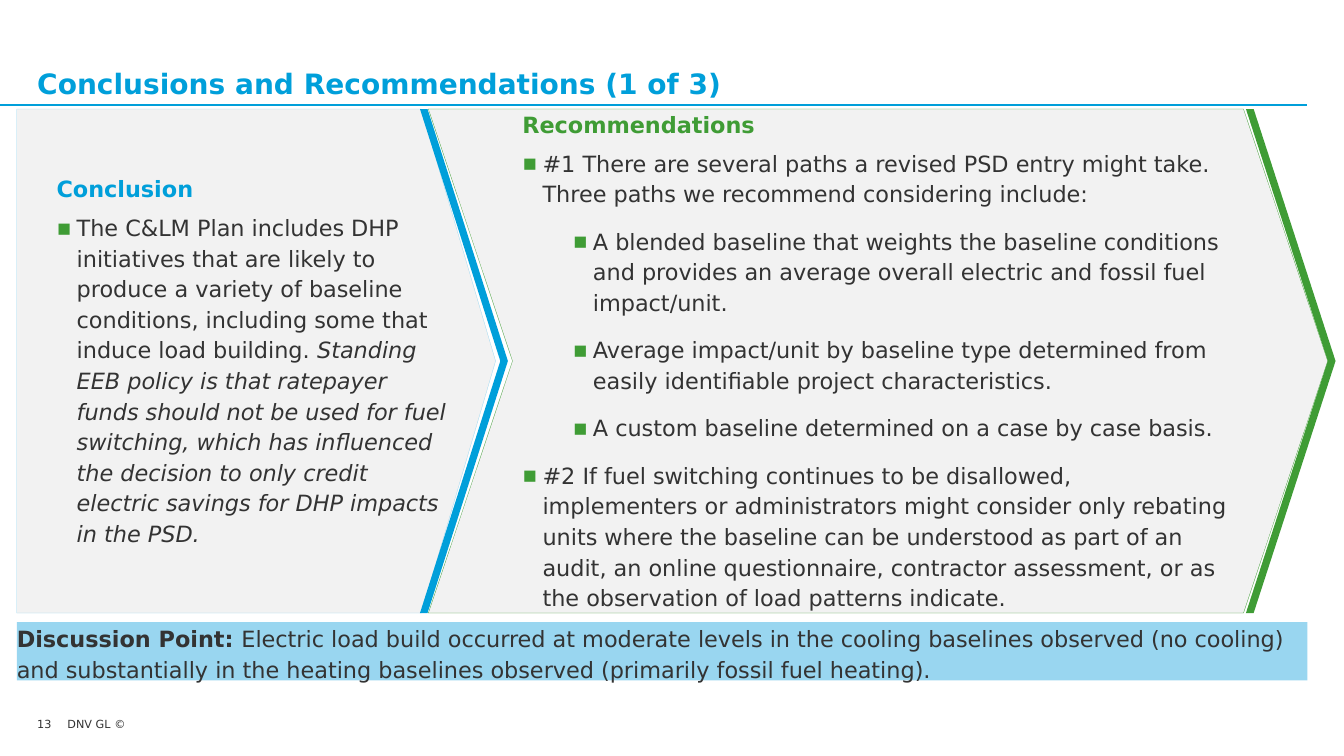
from pptx import Presentation
from pptx.dml.color import RGBColor
from pptx.enum.shapes import MSO_CONNECTOR, MSO_SHAPE
from pptx.enum.text import MSO_ANCHOR, MSO_AUTO_SIZE, PP_ALIGN
from pptx.oxml.ns import qn
from pptx.util import Pt
from lxml.etree import SubElement

BLUE = RGBColor(0x00, 0x9F, 0xDA)
GREEN = RGBColor(0x3F, 0x9C, 0x35)
LIGHT_BLUE = RGBColor(0x99, 0xD6, 0xF0)
PANEL_GRAY = RGBColor(0xF2, 0xF2, 0xF2)
INK = RGBColor(0x33, 0x33, 0x33)
FONT = "DejaVu Sans"
BULLET_INDENTS = {1: 14.4, 2: 50.4}
HANGING = 14.4
PANEL_TOP, PANEL_HEIGHT = 77.9, 360

CONCLUSION = [
    (1, [("The C&LM Plan includes DHP initiatives that are likely to produce a variety of "
          "baseline conditions, including some that induce load building. ", {}),
         ("Standing EEB policy is that ratepayer funds should not be used for fuel switching, "
          "which has influenced the decision to only credit electric savings for DHP impacts "
          "in the PSD.", {"italic": True})]),
]
RECOMMENDATIONS = [
    (1, [("#1 There are several paths a revised PSD entry might take. Three paths we "
          "recommend considering include:", {})]),
    (2, [("A blended baseline that weights the baseline conditions and provides an average "
          "overall electric and fossil fuel impact/unit.", {})]),
    (2, [("Average impact/unit by baseline type determined from easily identifiable project "
          "characteristics.", {})]),
    (2, [("A custom baseline determined on a case by case basis.", {})]),
    (1, [("#2 If fuel switching continues to be disallowed, implementers or administrators "
          "might consider only rebating units where the baseline can be understood as part of "
          "an audit, an online questionnaire, contractor assessment, or as the observation of "
          "load patterns indicate.", {})]),
]
DISCUSSION = [
    ("Discussion Point: ", {"bold": True}),
    ("Electric load build occurred at moderate levels in the cooling baselines observed "
     "(no cooling) and substantially in the heating baselines observed (primarily fossil "
     "fuel heating).", {}),
]


def set_attributes(target, values):
    for name, value in values.items():
        setattr(target, name, value)


def set_frame(frame, anchor=MSO_ANCHOR.TOP, margins=(0, 0, 0, 0), wrap=True):
    left, top, right, bottom = map(Pt, margins)
    set_attributes(frame, {
        "auto_size": MSO_AUTO_SIZE.NONE, "word_wrap": wrap, "vertical_anchor": anchor,
        "margin_left": left, "margin_top": top,
        "margin_right": right, "margin_bottom": bottom,
    })


def write_runs(paragraph, runs, size=16, color=INK):
    paragraph.alignment = PP_ALIGN.LEFT
    for text, style in runs:
        run = paragraph.add_run()
        run.text = text
        set_attributes(run.font, {"name": FONT, "size": Pt(size), "bold": False, **style})
        run.font.color.rgb = color


def add_bullet(paragraph, level):
    properties = paragraph._p.get_or_add_pPr()
    properties.set("marL", str(Pt(BULLET_INDENTS[level])))
    properties.set("indent", str(Pt(-HANGING)))
    bullet_color = SubElement(properties, qn("a:buClr"))
    SubElement(bullet_color, qn("a:srgbClr"), val=str(GREEN))
    SubElement(properties, qn("a:buFont"), typeface=FONT)
    SubElement(properties, qn("a:buChar"), char="▪")
    set_attributes(paragraph, {"level": level, "line_spacing": 1.14,
                               "space_before": Pt(6), "space_after": Pt(6)})


def add_shape(slide, kind, box, fill, line=None, adjustment=None):
    shape = slide.shapes.add_shape(kind, *map(Pt, box))
    shape.shadow.inherit = False
    shape.fill.solid()
    shape.fill.fore_color.rgb = fill
    if line is None:
        shape.line.fill.background()
    else:
        shape.line.color.rgb = line
        shape.line.width = Pt(0.2)
    if adjustment is not None:
        shape.adjustments[0] = adjustment
    return shape


def add_panel(slide, kind, left, width, adjustment, line, heading, heading_color,
              bullets, left_margin):
    """Add a gray arrow-shaped panel with a heading and bulleted text."""
    box = (left, PANEL_TOP, width, PANEL_HEIGHT)
    frame = add_shape(slide, kind, box, PANEL_GRAY, line, adjustment).text_frame
    set_frame(frame, MSO_ANCHOR.MIDDLE, (left_margin, 3.6, 7.2, 3.6))
    write_runs(frame.paragraphs[0], [(heading, {"bold": True})], color=heading_color)
    for level, runs in bullets:
        paragraph = frame.add_paragraph()
        add_bullet(paragraph, level)
        write_runs(paragraph, runs)


def add_edge(slide, left, width, color):
    """Add the thin coloured chevron that closes a panel."""
    add_shape(slide, MSO_SHAPE.CHEVRON, (left, PANEL_TOP, width, PANEL_HEIGHT),
              color, adjustment=0.914)


def add_footer_text(slide, text, left, width):
    box = slide.shapes.add_textbox(Pt(left), Pt(512.6), Pt(width), Pt(14.4))
    set_frame(box.text_frame, wrap=False)
    write_runs(box.text_frame.paragraphs[0], [(text, {})], size=8)


def add_title(slide, text):
    title = slide.shapes.title
    set_attributes(title, {"left": Pt(26.6), "top": Pt(18.7),
                           "width": Pt(907.2), "height": Pt(52.6)})
    set_frame(title.text_frame, MSO_ANCHOR.BOTTOM)
    write_runs(title.text_frame.paragraphs[0], [(text, {"bold": True})], 20, BLUE)


def add_title_rule(slide):
    rule = slide.shapes.add_connector(MSO_CONNECTOR.STRAIGHT, Pt(0), Pt(75), Pt(933.8), Pt(75))
    rule.line.color.rgb = BLUE
    rule.line.width = Pt(1.25)
    SubElement(rule._element.spPr, qn("a:effectLst"))


def add_discussion(slide):
    bar = add_shape(slide, MSO_SHAPE.RECTANGLE, (12, 444.4, 921.8, 41.6), LIGHT_BLUE)
    set_frame(bar.text_frame)
    paragraph = bar.text_frame.paragraphs[0]
    paragraph.line_spacing = 1.13
    write_runs(paragraph, DISCUSSION)


def main():
    presentation = Presentation()
    set_attributes(presentation, {"slide_width": Pt(960), "slide_height": Pt(540)})
    slide = presentation.slides.add_slide(presentation.slide_layouts[5])
    add_title(slide, "Conclusions and Recommendations (1 of 3)")
    add_title_rule(slide)
    add_panel(slide, MSO_SHAPE.PENTAGON, 12, 342, 0.155, LIGHT_BLUE,
              "Conclusion", BLUE, CONCLUSION, 28.4)
    add_edge(slide, 300, 62.8, BLUE)
    add_panel(slide, MSO_SHAPE.CHEVRON, 306, 642.4, 0.167, GREEN,
              "Recommendations", GREEN, RECOMMENDATIONS, 7.2)
    add_edge(slide, 890, 64, GREEN)
    add_discussion(slide)
    add_footer_text(slide, "13", 26.6, 21.6)
    add_footer_text(slide, "DNV GL ©", 48.2, 42.5)
    presentation.save("out.pptx")


if __name__ == "__main__":
    main()
